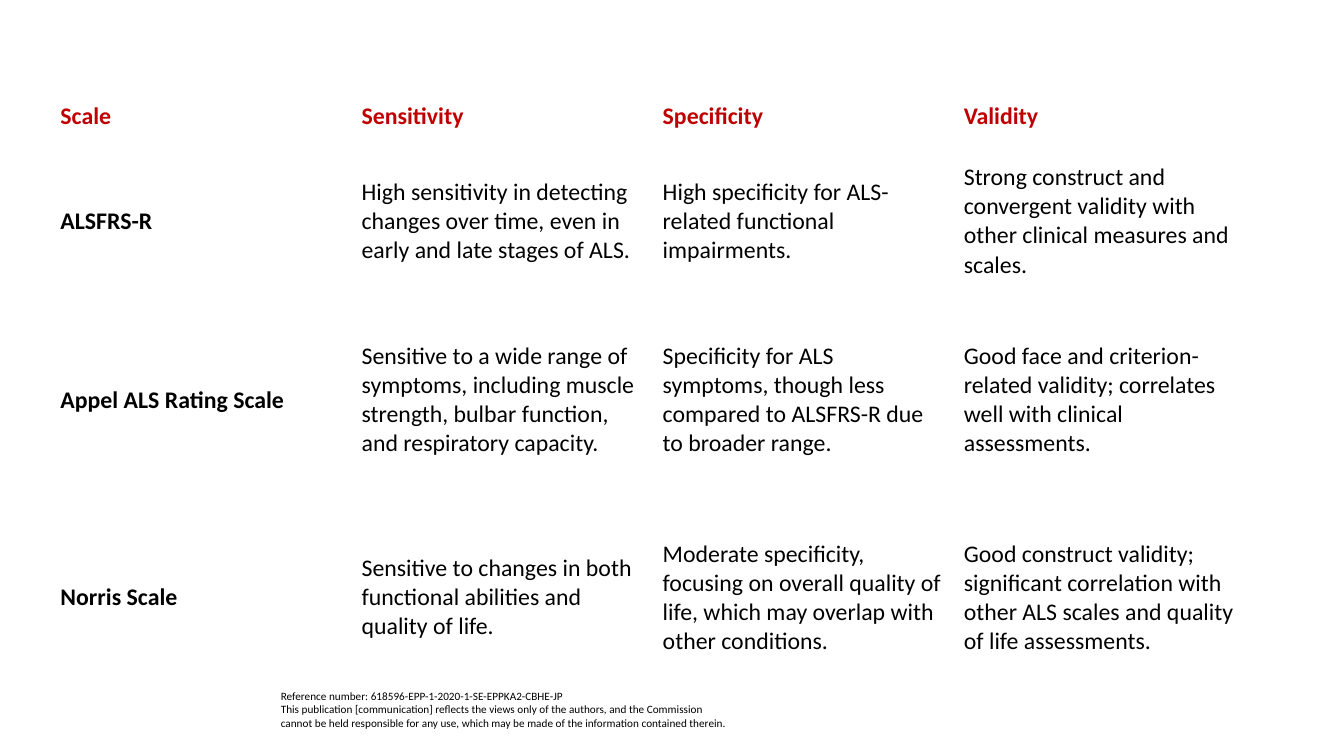
from lxml.etree import Element, SubElement
from pptx import Presentation
from pptx.dml.color import RGBColor
from pptx.enum.text import MSO_ANCHOR as Anchor, MSO_AUTO_SIZE as AutoSize
from pptx.oxml.ns import qn
from pptx.util import Pt

BLACK = RGBColor(0x00, 0x00, 0x00)
RED = RGBColor(0xC0, 0x00, 0x00)

SCALES = [
    ("Scale", "Sensitivity", "Specificity", "Validity"),
    (
        "ALSFRS-R",
        "High sensitivity in detecting changes over time, even in early and late stages of ALS.",
        "High specificity for ALS-related functional impairments.",
        "Strong construct and convergent validity with other clinical measures and scales.",
    ),
    (
        "Appel ALS Rating Scale",
        "Sensitive to a wide range of symptoms, including muscle strength, bulbar function, and respiratory capacity.",
        "Specificity for ALS symptoms, though less compared to ALSFRS-R due to broader range.",
        "Good face and criterion-related validity; correlates well with clinical assessments.",
    ),
    (
        "Norris Scale",
        "Sensitive to changes in both functional abilities and quality of life.",
        "Moderate specificity, focusing on overall quality of life, which may overlap with other conditions.",
        "Good construct validity; significant correlation with other ALS scales and quality of life assessments.",
    ),
]
ROW_HEIGHTS = (35.3, 114.5, 141.1, 141.1)
COLUMN_WIDTH = 215.1

DISCLAIMER = (
    "Reference number: 618596-EPP-1-2020-1-SE-EPPKA2-CBHE-JP",
    "This publication [communication] reflects the views only of the authors, "
    "and the Commission cannot be held responsible for any use, "
    "which may be made of the information contained therein.",
)


class SlideBuilder:
    font_name = "Calibri"

    def __init__(self, slide):
        self.slide = slide

    def style(self, paragraph, size, color=BLACK, bold=False):
        font = paragraph.font
        font.name = self.font_name
        font.size = Pt(size)
        font.bold = bold
        font.color.rgb = color

    def clear_borders(self, cell):
        properties = cell._tc.get_or_add_tcPr()
        for position, side in enumerate(("a:lnL", "a:lnR", "a:lnT", "a:lnB")):
            border = Element(qn(side))
            SubElement(border, qn("a:noFill"))
            properties.insert(position, border)

    def note(self, lines, left, top, width, height, size):
        box = self.slide.shapes.add_textbox(Pt(left), Pt(top), Pt(width), Pt(height))
        frame = box.text_frame
        frame.word_wrap = True
        frame.auto_size = AutoSize.SHAPE_TO_FIT_TEXT
        paragraph = frame.paragraphs[0]
        for index, line in enumerate(lines):
            if index:
                paragraph.add_line_break()
            paragraph.add_run().text = line
        self.style(paragraph, size)

    def table(self, rows, left, top, column_width, row_heights, size):
        columns = len(rows[0])
        table = self.slide.shapes.add_table(
            len(rows), columns, Pt(left), Pt(top),
            Pt(column_width * columns), Pt(sum(row_heights)),
        ).table
        table.first_row = False
        table.horz_banding = False
        for column in table.columns:
            column.width = Pt(column_width)
        for r, (texts, height) in enumerate(zip(rows, row_heights)):
            table.rows[r].height = Pt(height)
            for c, text in enumerate(texts):
                cell = table.cell(r, c)
                cell.fill.background()
                self.clear_borders(cell)
                cell.vertical_anchor = Anchor.MIDDLE
                cell.text = text
                self.style(
                    cell.text_frame.paragraphs[0], size,
                    color=BLACK if r else RED, bold=r == 0 or c == 0,
                )


def main():
    deck = Presentation()
    deck.slide_width, deck.slide_height = Pt(960), Pt(540)
    builder = SlideBuilder(deck.slides.add_slide(deck.slide_layouts[6]))
    builder.table(SCALES, 36, 65.5, COLUMN_WIDTH, ROW_HEIGHTS, size=17)
    builder.note(DISCLAIMER, 193.5, 488.75, 334, 36, size=8)
    deck.save("out.pptx")


if __name__ == "__main__":
    main()
